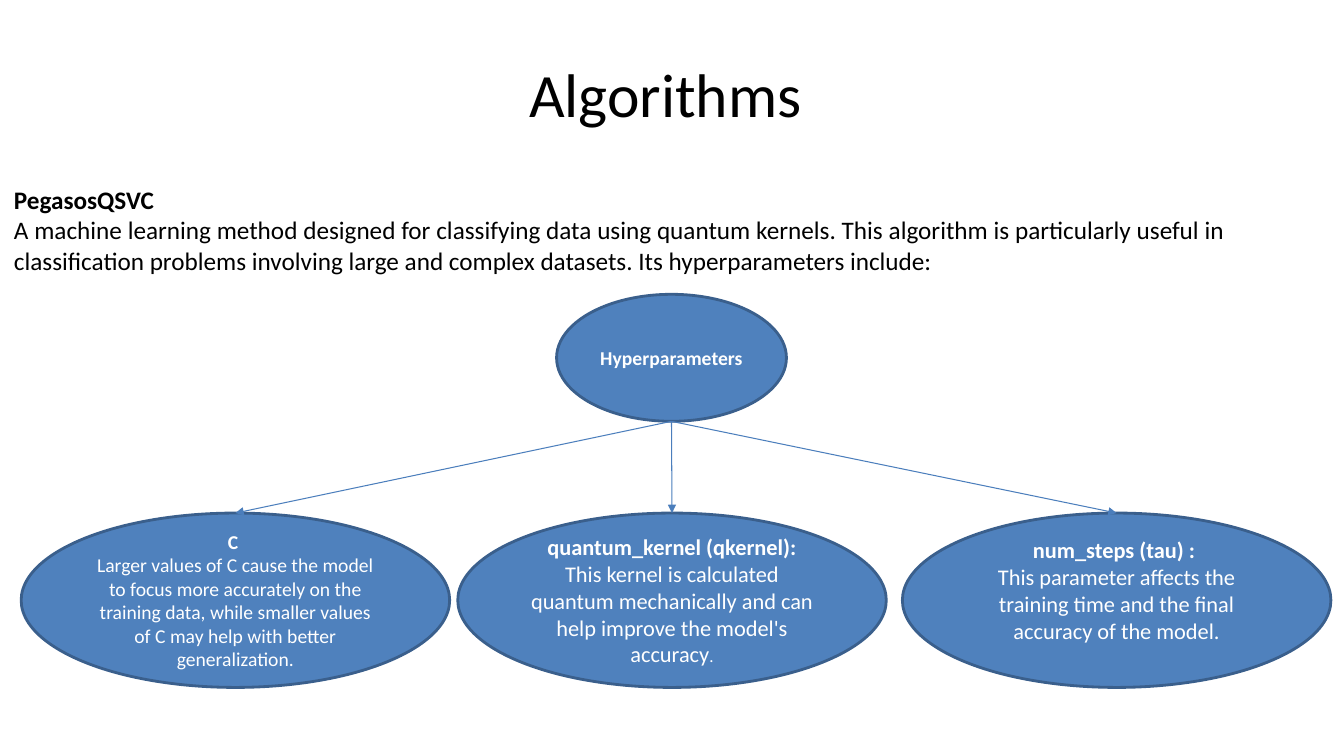
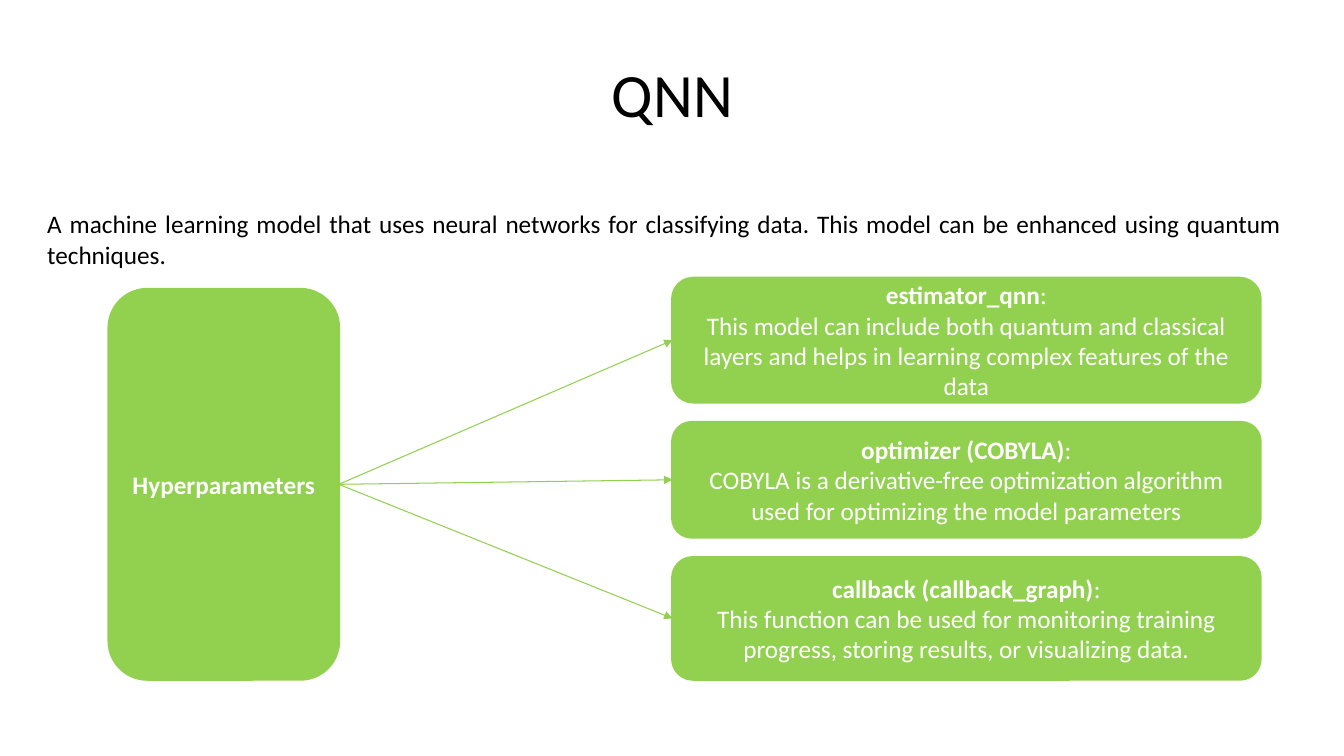
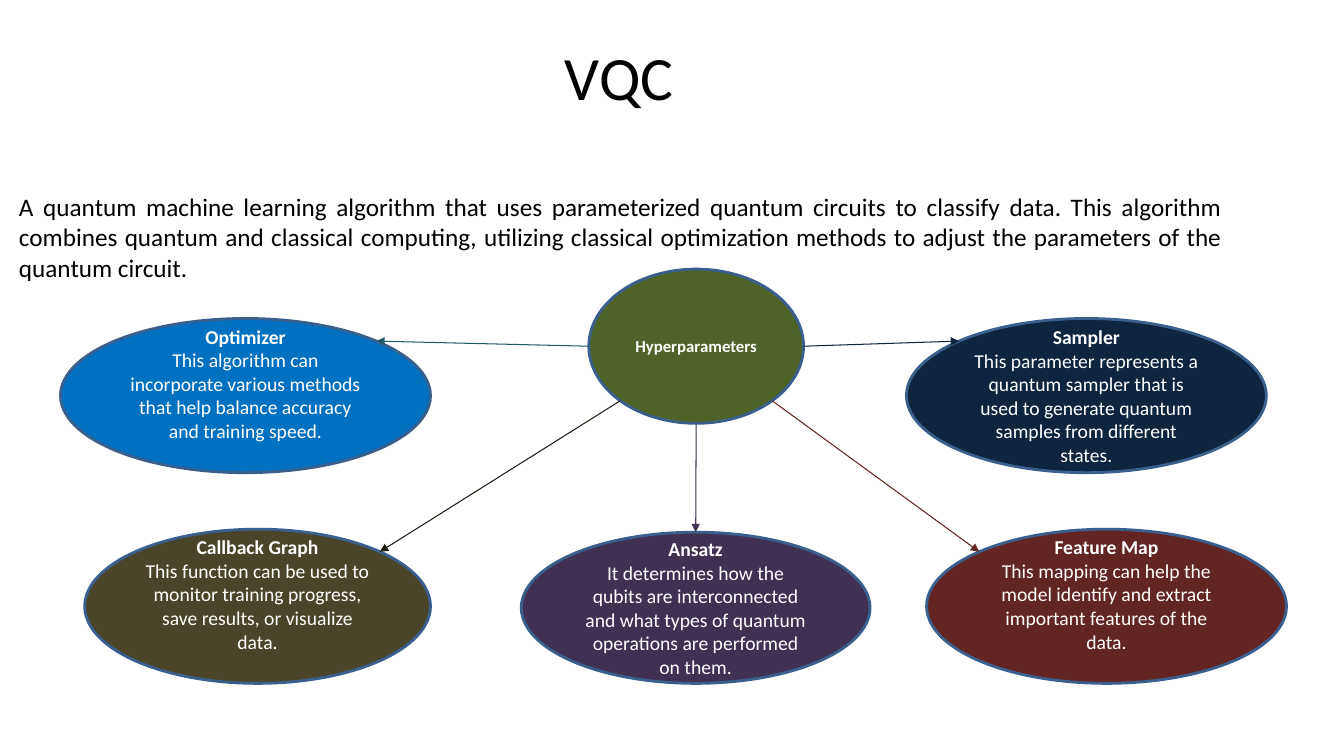
from lxml import etree
from pptx import Presentation
from pptx import util as u
from pptx.dml.color import RGBColor
from pptx.enum import shapes, text
from pptx.oxml import ns

FONT = "Calibri"
BLACK, WHITE = "000000", "FFFFFF"
BLUE, EDGE, WIRE, GREEN = "4F81BD", "3A5F8C", "4B7EBC", "92D050"
OVAL = shapes.MSO_SHAPE.OVAL
ROUND = shapes.MSO_SHAPE.ROUNDED_RECTANGLE
LEFT, MID, JUST = text.PP_ALIGN.LEFT, text.PP_ALIGN.CENTER, text.PP_ALIGN.JUSTIFY
DIAG = 0.7071


def color(hue):
    return RGBColor.from_string(hue)


def assign(obj, **vals):
    for key, val in vals.items():
        setattr(obj, key, val)


def inches(box):
    return [u.Inches(v) for v in box]


def write(frame, paras, hue, align):
    frame.word_wrap = True
    for i, runs in enumerate(paras):
        para = frame.add_paragraph() if i else frame.paragraphs[0]
        para.alignment = align
        for words, size, bold in runs:
            run = para.add_run()
            run.text = words
            assign(run.font, name=FONT, size=u.Pt(size), bold=bold)
            run.font.color.rgb = color(hue)


def page(deck, title, box=(0.67, 0.3, 12, 1.25)):
    slide = deck.slides.add_slide(deck.slide_layouts[5])
    head = slide.shapes.title
    assign(head, **dict(zip(("left", "top", "width", "height"), inches(box))))
    head.text_frame.vertical_anchor = text.MSO_ANCHOR.MIDDLE
    write(head.text_frame, [[(title, 44, False)]], BLACK, MID)
    return slide


def intro(slide, box, words, lead=None):
    frame = slide.shapes.add_textbox(*inches(box)).text_frame
    paras = [[(words, 18, False)]]
    if lead:
        paras.insert(0, [(lead, 18, True)])
    write(frame, paras, BLACK, JUST)
    if lead:
        frame.paragraphs[0].alignment = LEFT


def node(slide, kind, box, paras, fill, edge=EDGE, pad=0):
    shape = slide.shapes.add_shape(kind, *inches(box))
    shape.shadow.inherit = False
    shape.fill.solid()
    shape.fill.fore_color.rgb = color(fill)
    shape.line.color.rgb = color(edge)
    shape.line.width = u.Pt(2)
    assign(shape.text_frame, vertical_anchor=text.MSO_ANCHOR.MIDDLE,
           margin_bottom=u.Inches(0.05 + pad))
    write(shape.text_frame, paras, WHITE, MID)


def site(box, dx, dy):
    x, y, w, h = box
    return x + w / 2 * (1 + dx), y + h / 2 * (1 + dy)


def arrow(slide, start, end, hue):
    wire = slide.shapes.add_connector(shapes.MSO_CONNECTOR.STRAIGHT, *inches(start + end))
    wire.line.color.rgb = color(hue)
    wire.line.width = u.Pt(0.75)
    etree.SubElement(wire.line._get_or_add_ln(), ns.qn("a:tailEnd"), type="triangle")
    etree.SubElement(wire._element.spPr, ns.qn("a:effectLst"))


def pegasos(deck):
    slide = page(deck, "Algorithms ")
    intro(slide, (0.04, 1.78, 12.21, 1.31),
          "A machine learning method designed for classifying data using quantum kernels. "
          "This algorithm is particularly useful in classification problems involving large "
          "and complex datasets. Its hyperparameters include:", "PegasosQSVC")
    root = (5.52, 2.92, 2.28, 1.26)
    node(slide, OVAL, root, [[("Hyperparameters", 14, True)]], BLUE)
    leaves = [
        (0.21, "C ", 14, [("Larger values of C cause the model to focus more accurately on the "
                           "training data, while smaller values of C may help with better "
                           "generalization.", 14, False)], 0),
        (4.54, "quantum_kernel (qkernel):", 16,
         [("This kernel is calculated quantum mechanically and can help improve the "
           "model's accuracy", 16, False), (".", 12, False)], 0),
        (8.95, "num_steps (tau) : ", 16,
         [("This parameter affects the training time and the final accuracy of the model.",
           16, False)], 0.2),
    ]
    for x, name, size, body, pad in leaves:
        box = (x, 5.09, 4.25, 1.73)
        node(slide, OVAL, box, [[(name, size, True)], body], BLUE, pad=pad)
        arrow(slide, site(root, 0, 1), site(box, 0, -1), WIRE)


def qnn(deck):
    slide = page(deck, "QNN")
    intro(slide, (0.37, 2.02, 12.44, 0.71),
          "A machine learning model that uses neural networks for classifying data. "
          "This model can be enhanced using quantum techniques.")
    root = (1.08, 2.87, 2.28, 3.87)
    node(slide, ROUND, root, [[("Hyperparameters", 18, True)]], GREEN, GREEN)
    leaves = [
        (1.23, "estimator_qnn", "This model can include both quantum and classical layers and "
                                "helps in learning complex features of the data"),
        (1.14, "optimizer (COBYLA)", "COBYLA is a derivative-free optimization algorithm used "
                                     "for optimizing the model parameters"),
        (1.21, "callback (callback_graph)", "This function can be used for monitoring training "
                                            "progress, storing results, or visualizing data."),
    ]
    top = 2.76
    for high, name, body in leaves:
        box = (6.67, top, 5.83, high)
        node(slide, ROUND, box,
             [[(name, 18, True), (":", 18, False)], [(body, 18, False)]], GREEN, GREEN)
        arrow(slide, site(root, 1, 0), site(box, -1, 0), GREEN)
        top += high + 0.2


def vqc(deck):
    slide = page(deck, "VQC ", (0.21, 0.13, 12, 1.25))
    intro(slide, (0.09, 1.85, 12.13, 1.01),
          "A quantum machine learning algorithm that uses parameterized quantum circuits to "
          "classify data. This algorithm combines quantum and classical computing, utilizing "
          "classical optimization methods to adjust the parameters of the quantum circuit.")
    root = (5.84, 2.67, 2.13, 1.53)
    node(slide, OVAL, root, [[("Hyperparameters", 12, True)]], "4F6228")
    leaves = [
        ((5.17, 5.28, 3.46, 1.5), "Ansatz",
         "It determines how the qubits are interconnected and what types of quantum "
         "operations are performed on them.", "403152", "403152", 0, (0, 1), (0, -1)),
        ((8.99, 3.16, 3.57, 1.53), "Sampler",
         "This parameter represents a quantum sampler that is used to generate quantum "
         "samples from different states.", "0F243E", "0F243E", 0, (1, 0), (-DIAG, -DIAG)),
        ((0.6, 3.16, 3.67, 1.53), "Optimizer",
         "This algorithm can incorporate various methods that help balance accuracy and "
         "training speed.", "0070C0", "215968", 0.24, (-1, 0), (DIAG, -DIAG)),
        ((0.84, 5.25, 3.43, 1.53), "Callback Graph",
         "This function can be used to monitor training progress, save results, or "
         "visualize data.", "4A452A", "1E1C11", 0.24, (-DIAG, DIAG), (DIAG, -DIAG)),
        ((9.19, 5.25, 3.57, 1.53), "Feature Map",
         "This mapping can help the model identify and extract important features of the "
         "data.", "632523", "632523", 0.24, (DIAG, DIAG), (-DIAG, -DIAG)),
    ]
    for box, name, body, fill, hue, pad, start, end in leaves:
        node(slide, OVAL, box, [[(name, 14, True)], [(body, 14, False)]], fill, pad=pad)
        arrow(slide, site(root, *start), site(box, *end), hue)


def main():
    deck = Presentation()
    assign(deck, slide_width=u.Inches(13.33), slide_height=u.Inches(7.5))
    for build in (pegasos, qnn, vqc):
        build(deck)
    deck.save("out.pptx")


if __name__ == "__main__":
    main()
